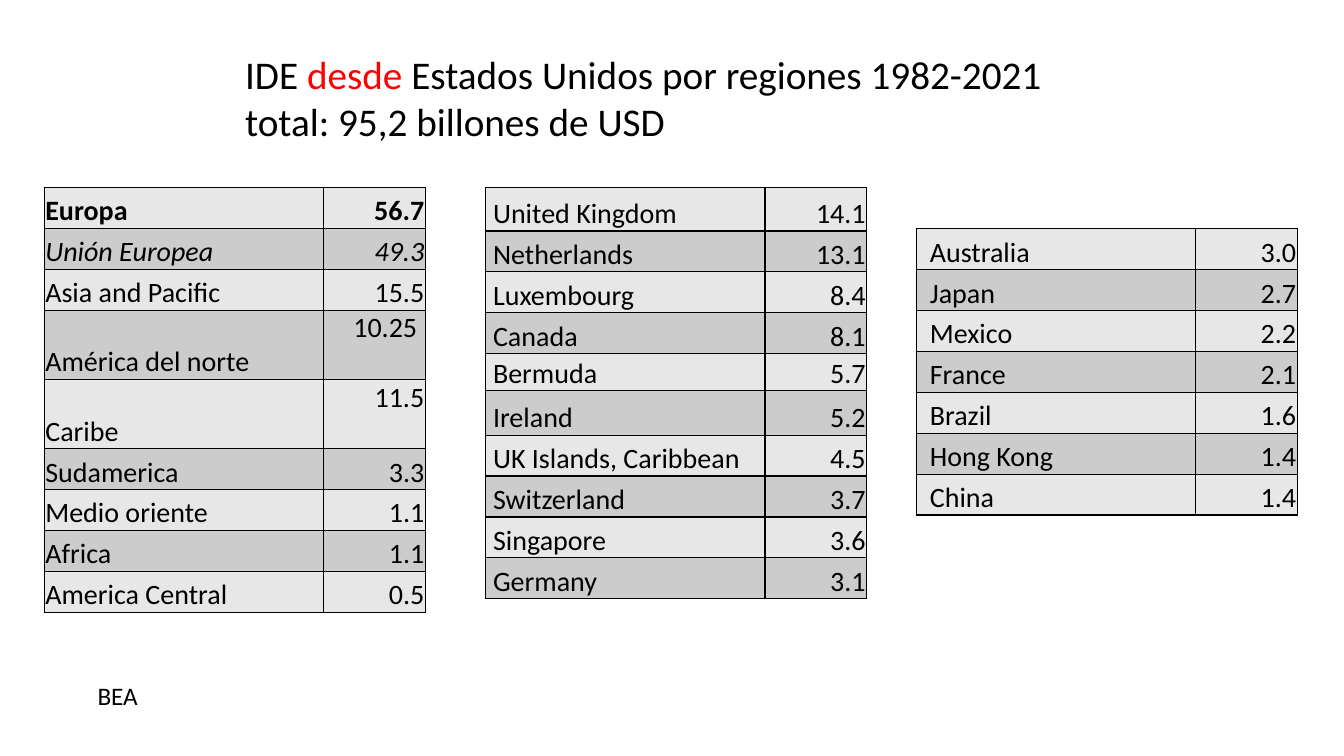
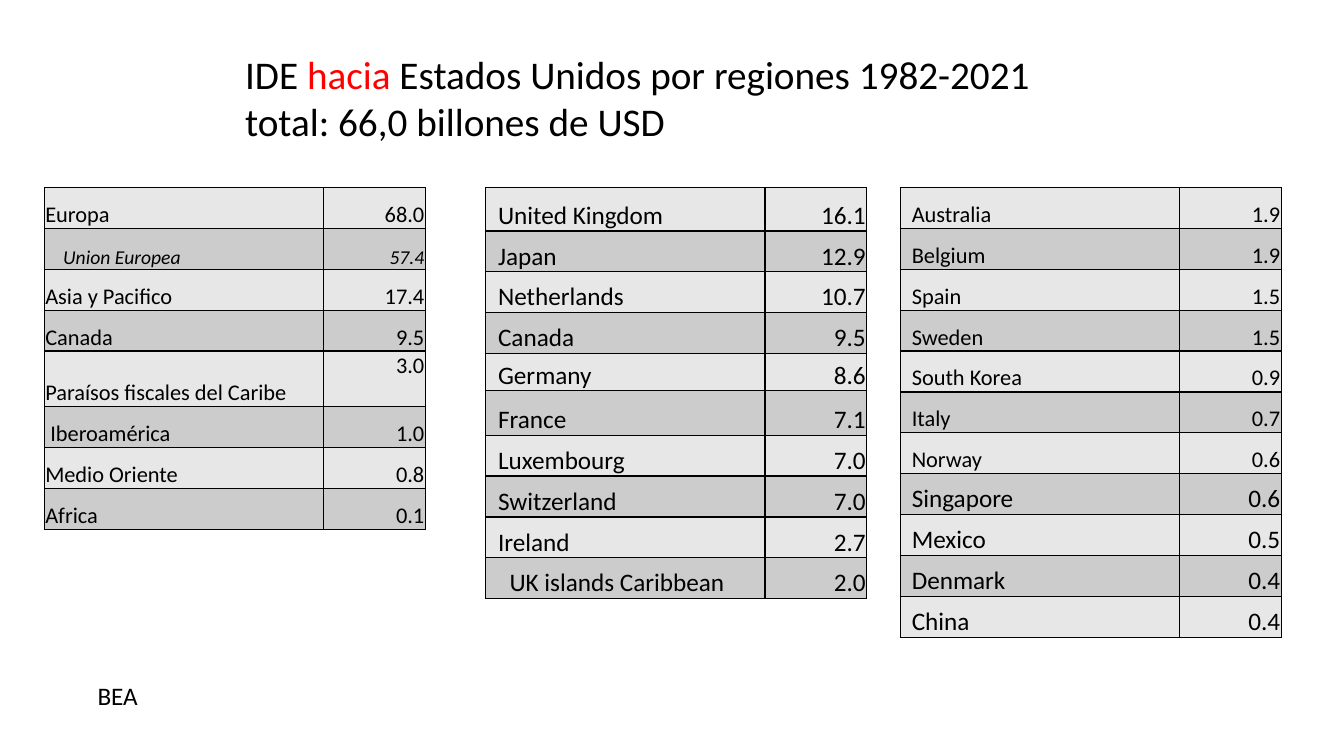
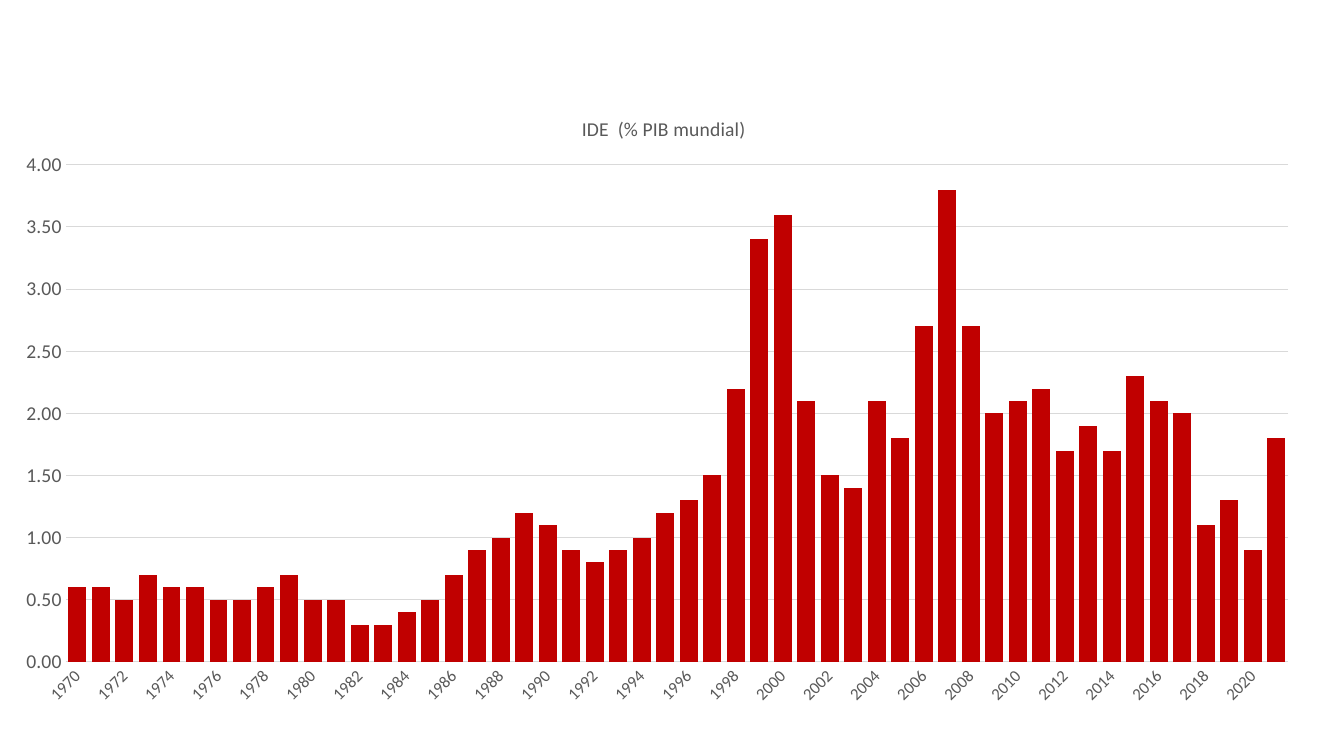
from dataclasses import dataclass

from lxml.etree import SubElement
from pptx import Presentation
from pptx.chart.data import CategoryChartData
from pptx.dml.color import RGBColor
from pptx.enum.chart import XL_CHART_TYPE, XL_TICK_MARK
from pptx.enum.text import MSO_ANCHOR, MSO_AUTO_SIZE, PP_ALIGN
from pptx.oxml import parse_xml
from pptx.oxml.ns import nsdecls, qn
from pptx.util import Pt

FONT = "Calibri"
BLACK = RGBColor(0x00, 0x00, 0x00)
RED = RGBColor(0xFF, 0x00, 0x00)
DARK_RED = RGBColor(0xC0, 0x00, 0x00)
GREY_TEXT = RGBColor(0x59, 0x59, 0x59)
GRID = RGBColor(0xD9, 0xD9, 0xD9)
BANDS = (RGBColor(0xE7, 0xE7, 0xE7), RGBColor(0xCC, 0xCC, 0xCC))

COLUMN_WIDTHS = (199.4, 72.7)
ROW_HEIGHT = 29.2
CELL_MARGIN = 0.7
TABLE_TOP = 134
REGIONS_LEFT = 31.7
COUNTRIES_LEFT = 347


@dataclass
class Entry:
    name: str
    value: str
    size: float = 0
    indent: float = 0
    height: float = ROW_HEIGHT
    bold: bool = False
    italic: bool = False
    value_on_top: bool = False
    value_inset: float = 0


@dataclass
class Ranking:
    left: float
    size: float
    entries: list[Entry]
    indent: float = 0
    top: float = TABLE_TOP


@dataclass
class Investment:
    direction: str
    total: str
    rankings: list[Ranking]


INVESTMENTS = [
    Investment("desde", "95,2", [
        Ranking(REGIONS_LEFT, 20, [
            Entry("Europa", "56.7", bold=True),
            Entry("Unión Europea", "49.3", italic=True),
            Entry("Asia and Pacific", "15.5"),
            Entry("América del norte", "10.25", height=49.5, value_on_top=True, value_inset=5),
            Entry("Caribe", "11.5", height=49.5, value_on_top=True),
            Entry("Sudamerica", "3.3"),
            Entry("Medio oriente", "1.1"),
            Entry("Africa", "1.1"),
            Entry("America Central", "0.5"),
        ]),
        Ranking(COUNTRIES_LEFT, 20, [
            Entry("United Kingdom", "14.1", height=31),
            Entry("Netherlands", "13.1"),
            Entry("Luxembourg", "8.4"),
            Entry("Canada", "8.1"),
            Entry("Bermuda", "5.7", height=26.6),
            Entry("Ireland", "5.2", height=31.7),
            Entry("UK Islands, Caribbean", "4.5"),
            Entry("Switzerland", "3.7"),
            Entry("Singapore", "3.6"),
            Entry("Germany", "3.1"),
        ], indent=4.5),
        Ranking(654.5, 20, [
            Entry("Australia", "3.0"),
            Entry("Japan", "2.7"),
            Entry("Mexico", "2.2"),
            Entry("France", "2.1"),
            Entry("Brazil", "1.6"),
            Entry("Hong Kong", "1.4"),
            Entry("China", "1.4"),
        ], indent=9, top=163.5),
    ]),
    Investment("hacia", "66,0", [
        Ranking(REGIONS_LEFT, 16, [
            Entry("Europa", "68.0"),
            Entry("Union Europea", "57.4", size=14, indent=12.7, italic=True),
            Entry("Asia y Pacifico", "17.4"),
            Entry("Canada", "9.5"),
            Entry("Paraísos fiscales del Caribe", "3.0", height=39.8, value_on_top=True),
            Entry("Iberoamérica", "1.0", indent=3.6),
            Entry("Medio Oriente", "0.8"),
            Entry("Africa", "0.1"),
        ]),
        Ranking(COUNTRIES_LEFT, 18, [
            Entry("United Kingdom", "16.1", height=31),
            Entry("Japan", "12.9"),
            Entry("Netherlands", "10.7"),
            Entry("Canada", "9.5"),
            Entry("Germany", "8.6", height=26.6),
            Entry("France", "7.1", height=31.7),
            Entry("Luxembourg", "7.0"),
            Entry("Switzerland", "7.0"),
            Entry("Ireland", "2.7"),
            Entry("UK islands Caribbean", "2.0", indent=16.3),
        ], indent=8.1),
        Ranking(643, 16, [
            Entry("Australia", "1.9"),
            Entry("Belgium", "1.9"),
            Entry("Spain", "1.5"),
            Entry("Sweden", "1.5"),
            Entry("South Korea", "0.9"),
            Entry("Italy", "0.7"),
            Entry("Norway", "0.6"),
            Entry("Singapore", "0.6", size=18),
            Entry("Mexico", "0.5", size=18),
            Entry("Denmark", "0.4", size=18),
            Entry("China", "0.4", size=18),
        ], indent=7.6),
    ]),
]

FIRST_YEAR = 1970
WORLD_GDP_SHARES = (
    0.6, 0.6, 0.5, 0.7, 0.6, 0.6, 0.5, 0.5, 0.6, 0.7, 0.5, 0.5, 0.3,
    0.3, 0.4, 0.5, 0.7, 0.9, 1, 1.2, 1.1, 0.9, 0.8, 0.9, 1, 1.2,
    1.3, 1.5, 2.2, 3.4, 3.6, 2.1, 1.5, 1.4, 2.1, 1.8, 2.7, 3.8, 2.7,
    2, 2.1, 2.2, 1.7, 1.9, 1.7, 2.3, 2.1, 2, 1.1, 1.3, 0.9, 1.8,
)


def style_font(font, size: float, color: RGBColor = BLACK) -> None:
    font.name = FONT
    font.size = Pt(size)
    font.color.rgb = color


def add_run(paragraph, text: str, size: float, color: RGBColor = BLACK):
    run = paragraph.add_run()
    run.text = text
    style_font(run.font, size, color)
    return run


def add_text(slide, left: float, top: float, width: float, height: float,
             size: float, lines: list[list[tuple[str, RGBColor]]]) -> None:
    frame = slide.shapes.add_textbox(Pt(left), Pt(top), Pt(width), Pt(height)).text_frame
    frame.word_wrap = True
    frame.auto_size = MSO_AUTO_SIZE.SHAPE_TO_FIT_TEXT
    for index, line in enumerate(lines):
        paragraph = frame.add_paragraph() if index else frame.paragraphs[0]
        for text, color in line:
            add_run(paragraph, text, size, color)


def add_borders(cell) -> None:
    properties = cell._tc.get_or_add_tcPr()
    for side in ("a:lnL", "a:lnR", "a:lnT", "a:lnB"):
        border = SubElement(properties, qn(side), w=str(Pt(1)))
        fill = SubElement(border, qn("a:solidFill"))
        SubElement(fill, qn("a:srgbClr"), val=str(BLACK))


def fill_cell(cell, text: str, entry: Entry, size: float, band: RGBColor):
    add_borders(cell)
    cell.fill.solid()
    cell.fill.fore_color.rgb = band
    cell.margin_left = cell.margin_right = cell.margin_top = Pt(CELL_MARGIN)
    cell.margin_bottom = Pt(0)
    cell.vertical_anchor = MSO_ANCHOR.BOTTOM
    run = add_run(cell.text_frame.paragraphs[0], text, size)
    run.font.bold = entry.bold
    run.font.italic = entry.italic


def add_ranking(slide, ranking: Ranking) -> None:
    entries = ranking.entries
    table = slide.shapes.add_table(
        len(entries), len(COLUMN_WIDTHS), Pt(ranking.left), Pt(ranking.top),
        Pt(sum(COLUMN_WIDTHS)), Pt(sum(entry.height for entry in entries))).table
    table.first_row = table.horz_banding = False
    for column, width in zip(table.columns, COLUMN_WIDTHS):
        column.width = Pt(width)
    for index, entry in enumerate(entries):
        table.rows[index].height = Pt(entry.height)
        name, value = table.cell(index, 0), table.cell(index, 1)
        for cell, text in ((name, entry.name), (value, entry.value)):
            fill_cell(cell, text, entry, entry.size or ranking.size, BANDS[index % 2])
        name.margin_left = Pt(CELL_MARGIN + (entry.indent or ranking.indent))
        value.margin_right = Pt(CELL_MARGIN + entry.value_inset)
        value.text_frame.paragraphs[0].alignment = PP_ALIGN.RIGHT
        if entry.value_on_top:
            value.vertical_anchor = MSO_ANCHOR.TOP


def add_investment_slide(slide, investment: Investment) -> None:
    add_text(slide, 168, 32.4, 589, 75, 28, [
        [("IDE ", BLACK), (investment.direction, RED),
         (" Estados Unidos por regiones 1982-2021", BLACK)],
        [(f"total: {investment.total} billones de USD", BLACK)],
    ])
    add_text(slide, 62.6, 482.4, 105, 29, 18, [[("BEA", BLACK)]])
    for ranking in investment.rankings:
        add_ranking(slide, ranking)


def manual_layout(target: str, **fractions: float):
    modes = "".join(f'<c:{axis}Mode val="edge"/>' for axis in "xy")
    places = "".join(f'<c:{key} val="{share}"/>' for key, share in fractions.items())
    return parse_xml(f"<c:layout {nsdecls('c')}><c:manualLayout>{target}{modes}{places}"
                     "</c:manualLayout></c:layout>")


def drop_layout(parent) -> None:
    for layout in parent.findall(qn("c:layout")):
        parent.remove(layout)


def add_share_chart(slide) -> None:
    data = CategoryChartData(number_format="#,##0.00")
    data.categories = [str(FIRST_YEAR + offset) for offset in range(len(WORLD_GDP_SHARES))]
    data.add_series("IDE", WORLD_GDP_SHARES)
    chart = slide.shapes.add_chart(
        XL_CHART_TYPE.COLUMN_CLUSTERED, Pt(0), Pt(62), Pt(939), Pt(450), data).chart
    style_font(chart.font, 10)
    chart.has_legend = False

    chart.has_title = True
    add_run(chart.chart_title.text_frame.paragraphs[0], "IDE  (% PIB mundial)",
            14, GREY_TEXT).font.bold = False
    chart.chart_title.include_in_layout = False
    title = chart.chart_title._element
    drop_layout(title)
    title.find(qn("c:tx")).addnext(manual_layout("", x=0.44, y=0.04))

    plot = chart.plots[0]
    plot.gap_width = 31
    plot.overlap = -27
    plot.vary_by_categories = False
    bars = plot.series[0].format.fill
    bars.solid()
    bars.fore_color.rgb = DARK_RED
    area = chart._chartSpace.chart.plotArea
    drop_layout(area)
    area.insert(0, manual_layout('<c:layoutTarget val="inner"/>',
                                 x=0.05, y=0.124, w=0.93, h=0.789))

    years, shares = chart.category_axis, chart.value_axis
    for axis, size in ((years, 12), (shares, 14)):
        style_font(axis.tick_labels.font, size, GREY_TEXT)
        axis.major_tick_mark = axis.minor_tick_mark = XL_TICK_MARK.NONE
    shares.minimum_scale, shares.maximum_scale, shares.major_unit = 0, 4, 0.5
    shares.tick_labels.number_format = "#,##0.00"
    shares.tick_labels.number_format_is_linked = False
    shares.format.line.fill.background()
    shares.has_major_gridlines = True
    for line in (years.format.line, shares.major_gridlines.format.line):
        line.color.rgb = GRID
        line.width = Pt(0.75)
    years._element.find(qn("c:txPr")).find(qn("a:bodyPr")).set("rot", "-2700000")
    years._element.find(qn("c:noMultiLvlLbl")).addprevious(
        parse_xml(f'<c:tickLblSkip {nsdecls("c")} val="2"/>'))


def main() -> None:
    deck = Presentation()
    deck.slide_width, deck.slide_height = Pt(960), Pt(540)
    blank = deck.slide_layouts[6]
    for investment in INVESTMENTS:
        add_investment_slide(deck.slides.add_slide(blank), investment)
    add_share_chart(deck.slides.add_slide(blank))
    deck.save("out.pptx")


if __name__ == "__main__":
    main()
